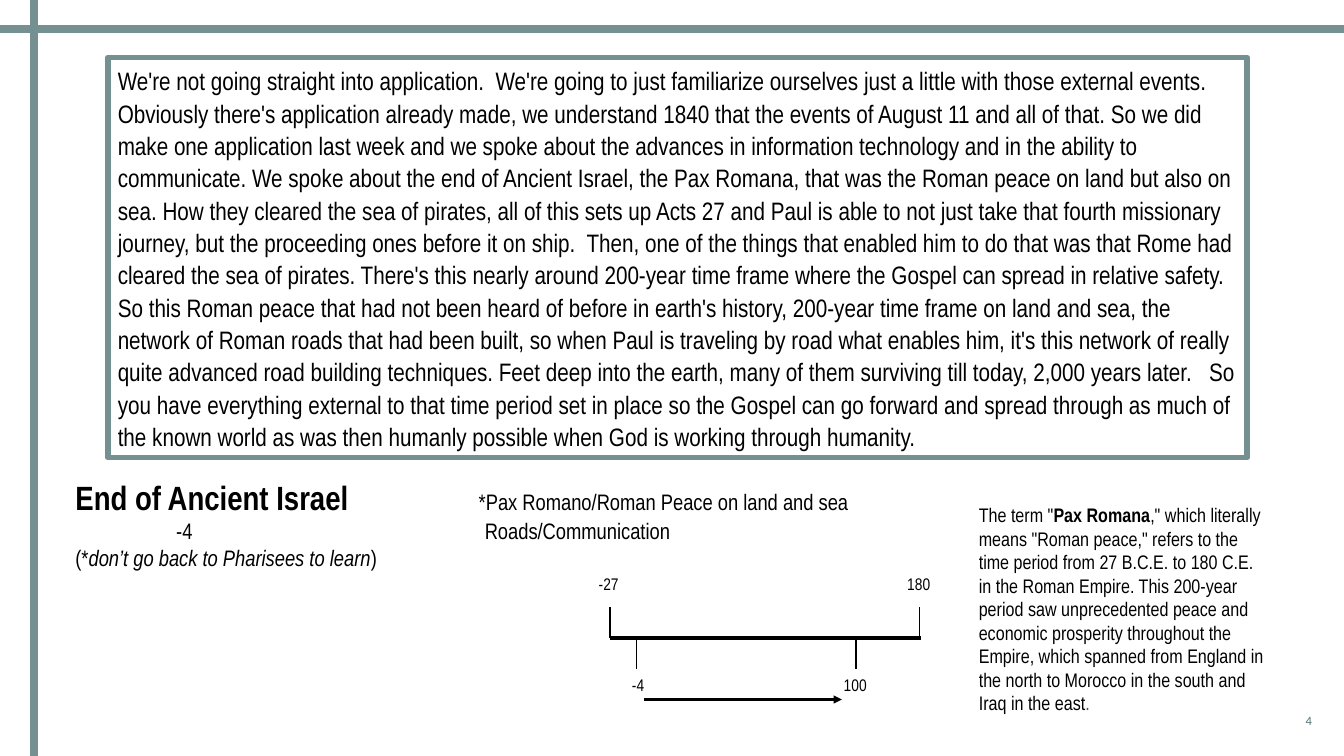
import pptx
import pptx.dml.color
import pptx.enum.shapes
import pptx.enum.text
import pptx.oxml
import pptx.oxml.ns
import pptx.util
from pptx.util import Inches

# Content: the lecture by sentences; each run elsewhere is (text, format changes)
LECTURE = [
    "We're not going straight into application. ",
    "We're going to just familiarize ourselves just a little with those external events.",
    "Obviously there's application already made, we understand 1840 that the events of August 11 "
    "and all of that.",
    "So we did make one application last week and we spoke about the advances in information "
    "technology and in the ability to communicate.",
    "We spoke about the end of Ancient Israel, the Pax Romana, that was the Roman peace on land "
    "but also on sea.",
    "How they cleared the sea of pirates, all of this sets up Acts 27 and Paul is able to not just "
    "take that fourth missionary journey, but the proceeding ones before it on ship. ",
    "Then, one of the things that enabled him to do that was that Rome had cleared the sea of pirates.",
    "There's this nearly around 200-year time frame where the Gospel can spread in relative safety. ",
    "So this Roman peace that had not been heard of before in earth's history, 200-year time frame "
    "on land and sea, the network of Roman roads that had been built, so when Paul is traveling by "
    "road what enables him, it's this network of really quite advanced road building techniques.",
    "Feet deep into the earth, many of them surviving till today, 2,000 years later.  ",
    "So you have everything external to that time period set in place so the Gospel can go forward "
    "and spread through as much of the known world as was then humanly possible when God is working "
    "through humanity.",
]
DEFINITION = [
    ('The term "', {}),
    ("Pax Romana", {"bold": True}),
    ('," which literally means "Roman peace," refers to the time period from 27 B.C.E. to 180 C.E. '
     "in the Roman Empire. This 200-year period saw unprecedented peace and economic prosperity "
     "throughout the Empire, which spanned from England in the north to Morocco in the south and "
     "Iraq in the east", {}),
    (".", {"color": "period"}),
]
# Each heading line: tab stops in inches, runs
HEADING = [
    ((4.0,), [("End of Ancient Israel", {"size": "title", "bold": True}),
              ("\t*Pax Romano/Roman Peace on land and sea", {})]),
    ((1.0, 4.06), [("\t-4\tRoads/Communication", {})]),
    ((), [("(*", {}), ("don’t go back to Pharisees to learn", {"italic": True}), (")", {})]),
]
# Timeline marks: label, tick x, label left, label width, above the bar
MARKS = [
    ("-27", 6.05, 5.84, 0.44, True),
    ("180", 9.12, 8.90, 0.53, True),
    ("-4", 6.31, 6.17, 0.44, False),
    ("100", 8.49, 8.27, 0.44, False),
]
PAGE_NUMBER = "4"

THEME = {
    "font": "Arial Narrow", "number_font": "Calibri",
    "colors": {"text": "000000", "frame": "749090", "number": "557272", "period": "4D5156"},
    "sizes": {"title": 24, "lecture": 18, "heading": 16, "definition": 14, "label": 12, "number": 9},
}
WIDTH, HEIGHT = 13.33, 7.5
BAR_Y, TICK, LABEL_HEIGHT = 6.33, 0.31, 0.3

presentation = pptx.Presentation()
presentation.slide_width, presentation.slide_height = Inches(WIDTH), Inches(HEIGHT)
slide = presentation.slides.add_slide(presentation.slide_layouts[6])


def theme_color(name):
    return pptx.dml.color.RGBColor.from_string(THEME["colors"][name])


def add_runs(paragraph, runs, size, color="text", font=THEME["font"]):
    for text, changes in runs:
        run = paragraph.add_run()
        run.text = text
        formats = {"size": size, "color": color, "name": font, **changes}
        run.font.color.rgb = theme_color(formats.pop("color"))
        formats["size"] = pptx.util.Pt(THEME["sizes"][formats["size"]])
        for attribute, value in formats.items():
            setattr(run.font, attribute, value)


def add_text(box, runs, size, **style):
    shape = slide.shapes.add_textbox(*map(Inches, box))
    shape.text_frame.word_wrap = True
    add_runs(shape.text_frame.paragraphs[0], runs, size, **style)
    return shape.text_frame


def add_line(start, end, width, color="text", arrow=False):
    line = slide.shapes.add_connector(
        pptx.enum.shapes.MSO_CONNECTOR.STRAIGHT, *map(Inches, (*start, *end)))
    line.line.color.rgb = theme_color(color)
    line.line.width = pptx.util.Pt(width)
    properties = line._element.spPr
    if arrow:
        tail = pptx.oxml.ns.qn("a:tailEnd")
        properties.find(pptx.oxml.ns.qn("a:ln")).append(
            properties.makeelement(tail, {"type": "triangle"}))
    properties.append(properties.makeelement(pptx.oxml.ns.qn("a:effectLst"), {}))


def add_tab_stops(paragraph, stops):
    properties = paragraph._p.get_or_add_pPr()
    tab_list = properties.makeelement(pptx.oxml.ns.qn("a:tabLst"), {})
    for stop in stops:
        tab_list.append(tab_list.makeelement(
            pptx.oxml.ns.qn("a:tab"), {"pos": str(int(Inches(stop))), "algn": "l"}))
    properties.append(tab_list)


# Framed lecture text
frame = slide.shapes.add_shape(
    pptx.enum.shapes.MSO_SHAPE.RECTANGLE, *map(Inches, (1.07, 0.57, 11.3, 3.97)))
frame.shadow.inherit = False
frame.fill.background()
frame.line.color.rgb = theme_color("frame")
frame.line.width = pptx.util.Pt(4)
frame.text_frame.word_wrap = True
lecture = frame.text_frame.paragraphs[0]
for attribute, value in {"alignment": pptx.enum.text.PP_ALIGN.LEFT, "line_spacing": 1.07}.items():
    setattr(lecture, attribute, value)
add_runs(lecture, [(" ".join(LECTURE), {})], "lecture")

# Border lines across the slide
add_line((0, 0.29), (WIDTH, 0.29), 6, "frame")
add_line((0.34, HEIGHT), (0.34, 0), 6, "frame")

# Timeline: bar, ticks with labels, arrow
add_line((6.05, BAR_Y), (9.13, BAR_Y), 3)
for label, x, left, width, above in MARKS:
    tick_end = BAR_Y - TICK if above else BAR_Y + TICK
    label_top = tick_end - 0.38 if above else tick_end
    add_line((x, BAR_Y), (x, tick_end), 0.75)
    add_text((left, label_top, width, LABEL_HEIGHT), [(label, {})], "label")
add_line((6.39, 6.94), (8.35, 6.94), 1.5, arrow=True)

# Definition and heading
add_text((9.61, 4.94, 3.03, 2.22), DEFINITION, "definition")
heading = add_text((0.65, 4.68, 8.07, 1.04), [], "heading")
for index, (stops, runs) in enumerate(HEADING):
    paragraph = heading.add_paragraph() if index else heading.paragraphs[0]
    if stops:
        add_tab_stops(paragraph, stops)
    add_runs(paragraph, runs, "heading")

# Page number
number = add_text((12.16, 6.95, 0.95, 0.4), [(PAGE_NUMBER, {})], "number",
                  color="number", font=THEME["number_font"])
number.vertical_anchor = pptx.enum.text.MSO_ANCHOR.MIDDLE
number.paragraphs[0].alignment = pptx.enum.text.PP_ALIGN.RIGHT

presentation.save("out.pptx")
